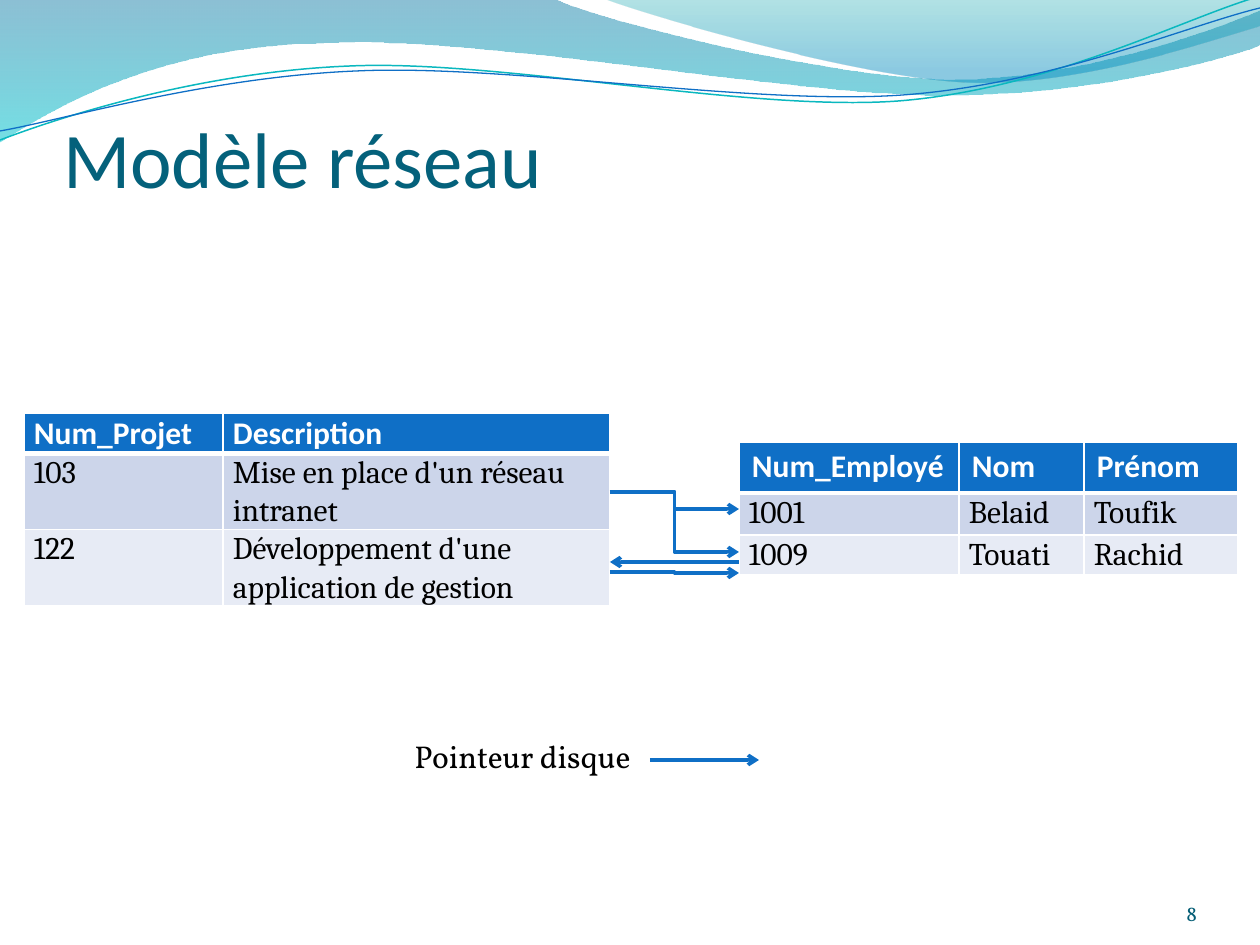
from lxml import etree
from pptx import Presentation
from pptx import util as u
from pptx.dml.color import RGBColor
from pptx.enum import shapes, text
from pptx.oxml.ns import qn

BLUE = RGBColor(0x0F, 0x6F, 0xC6)
AQUA = RGBColor(0x0A, 0xB8, 0xBF)
DEEP = RGBColor(0x00, 0x74, 0xA1)
CYAN = RGBColor(0x00, 0xC6, 0xCF)
TEAL = RGBColor(0x00, 0xA1, 0xA9)
AZURE = RGBColor(0x00, 0x8B, 0xBF)
TITLE = RGBColor(0x04, 0x61, 0x7B)
NUMBER = RGBColor(0x04, 0x5D, 0x75)
DARK = RGBColor(0xCC, 0xD5, 0xEA)
LIGHT = RGBColor(0xE7, 0xEB, 0xF5)
WHITE = RGBColor(0xFF, 0xFF, 0xFF)
BLACK = RGBColor(0x00, 0x00, 0x00)
SCALE = 914400 / 126


def px(n):
    return round(n * SCALE)


def sub(node, tag, **attrs):
    return etree.SubElement(node, qn(tag), {k: str(v) for k, v in attrs.items()})


def bend(shape, parts):
    lines = iter(list(shape._element.iter(qn("a:lnTo"))))
    for part in parts:
        group = [next(lines) for _ in range(len(part) // 2)]
        if len(group) == 3:
            root = group[0].getparent()
            curve = sub(root, "a:cubicBezTo")
            group[0].addprevious(curve)
            for line in group:
                curve.append(line[0])
                root.remove(line)


class Deck:
    head = "Calibri"
    body = "Cambria"
    note = "Vollkorn"

    def __init__(self):
        self.prs = Presentation()
        self.prs.slide_width = px(1260)
        self.prs.slide_height = px(945)
        self.slide = self.prs.slides.add_slide(self.prs.slide_layouts[5])
        self.shapes = self.slide.shapes

    def style(self, frame, font, size, color, bold=False):
        for par in frame.paragraphs:
            for run in par.runs:
                run.font.name = font
                run.font.size = u.Pt(size)
                run.font.bold = bold
                run.font.color.rgb = color

    def inset(self, item, side, top, bottom):
        item.margin_left = item.margin_right = px(side)
        item.margin_top = px(top)
        item.margin_bottom = px(bottom)

    def title(self, words, x, y, w, h):
        box = self.shapes.title
        box.left, box.top, box.width, box.height = map(px, (x, y, w, h))
        frame = box.text_frame
        frame.text = words
        frame.auto_size = text.MSO_AUTO_SIZE.NONE
        frame.vertical_anchor = text.MSO_ANCHOR.BOTTOM
        frame.paragraphs[0].alignment = text.PP_ALIGN.LEFT
        self.inset(frame, 0, 6, 0)
        self.style(frame, self.head, 45, TITLE)

    def label(self, words, x, y, w, h, size, color):
        frame = self.shapes.add_textbox(*map(px, (x, y, w, h))).text_frame
        frame.text = words
        frame.word_wrap = True
        self.style(frame, self.note, size, color)
        return frame

    def number(self, words, x, y, w, h):
        frame = self.label(words, x, y, w, h, 12, NUMBER)
        frame.vertical_anchor = text.MSO_ANCHOR.BOTTOM
        frame.paragraphs[0].alignment = text.PP_ALIGN.RIGHT
        self.inset(frame, 0, 0, 0)

    def form(self, start, parts, close):
        spots = [p for part in parts for p in zip(part[::2], part[1::2])]
        pen = self.shapes.build_freeform(*start, scale=SCALE)
        pen.add_line_segments(spots, close=close)
        shape = pen.convert_to_shape()
        bend(shape, parts)
        shape.shadow.inherit = False
        return shape

    def wave(self, start, parts, stops):
        shape = self.form(start, parts, True)
        shape.line.fill.background()
        shape.fill.gradient()
        shape.fill.gradient_angle = 270
        for stop, (place, color, _) in zip(shape.fill.gradient_stops, stops):
            stop.position = place
            stop.color.rgb = color
        tones = shape._element.spPr.iter(qn("a:srgbClr"))
        for tone, (_, _, alpha) in zip(tones, stops):
            sub(tone, "a:alpha", val=alpha * 1000)

    def curve(self, start, parts, color, width):
        shape = self.form(start, parts, False)
        shape.fill.background()
        shape.line.color.rgb = color
        shape.line.width = u.Pt(width)

    def edge(self, cell, bottom):
        props = cell._tc.get_or_add_tcPr()
        sides = ("a:lnL", 1), ("a:lnR", 1), ("a:lnT", 1), ("a:lnB", bottom)
        for i, (tag, width) in enumerate(sides):
            line = sub(props, tag, w=u.Pt(width))
            sub(sub(line, "a:solidFill"), "a:srgbClr", val=WHITE)
            props.insert(i, line)

    def table(self, x, y, cols, rows, data, roomy=False):
        area = map(px, (x, y, sum(cols), sum(rows)))
        grid = self.shapes.add_table(len(rows), len(cols), *area).table
        for col, w in zip(grid.columns, cols):
            col.width = px(w)
        for row, h in zip(grid.rows, rows):
            row.height = px(h)
        for r, line in enumerate(data):
            for c, words in enumerate(line):
                cell = grid.cell(r, c)
                frame = cell.text_frame
                frame.text = words
                cell.fill.solid()
                cell.fill.fore_color.rgb = (BLUE, DARK, LIGHT)[r]
                if r == 0:
                    self.style(frame, self.head, 18, WHITE, True)
                else:
                    self.style(frame, self.body, 18, BLACK)
                if r == 0 and roomy:
                    self.inset(cell, 13, 6, 6)
                else:
                    self.inset(cell, 10, 0, 0)
                    frame.paragraphs[0].line_spacing = 1.05
                self.edge(cell, 1 if r else 3)

    def arrow(self, x1, y1, x2, y2, bent=False):
        kind = shapes.MSO_CONNECTOR
        link = self.shapes.add_connector(
            kind.ELBOW if bent else kind.STRAIGHT, *map(px, (x1, y1, x2, y2)))
        link.line.color.rgb = BLUE
        link.line.width = u.Pt(2)
        sub(link.line._get_or_add_ln(), "a:tailEnd", type="arrow")
        sub(link._element.spPr, "a:effectLst")


def main():
    deck = Deck()
    deck.wave((0, 0), [
        (554, -1), (600, 21, 837, 79, 955, 79), (1075, 79, 1207, 33, 1260, 11),
        (1261, 45), (1239, 55, 1096, 96, 940, 95), (784, 95, 481, 35, 324, 43),
        (163, 45, 58, 105, -1, 142)], [(0, DEEP, 45), (1, CYAN, 55)])
    deck.wave((604, -1), [
        (641, 14, 859, 78, 969, 82), (1079, 86, 1211, 40, 1260, 26),
        (1260, 0)], [(0, TEAL, 30), (0.8, AZURE, 45)])
    deck.curve((0, 140), [
        (60, 117, 199, 72, 349, 66), (498, 59, 747, 112, 898, 101),
        (1050, 89, 1182, 19, 1257, -3)], AQUA, 0.85)
    deck.curve((0, 131), [
        (59, 121, 207, 77, 357, 71), (508, 64, 752, 106, 903, 95),
        (1053, 84, 1186, 26, 1260, 8)], BLUE, 0.75)
    deck.title("Modèle réseau", 63, 97, 1134, 107)
    deck.table(24, 413, (199, 387), (38, 76, 76), [
        ("Num_Projet", "Description"),
        ("103", "Mise en place d'un réseau intranet"),
        ("122", "Développement d'une application de gestion")])
    deck.number("8", 1092, 876, 105, 50)
    deck.table(739, 442, (220, 125, 154), (51, 42, 40), [
        ("Num_Employé", "Nom", "Prénom"),
        ("1001", "Belaid", "Toufik"),
        ("1009", "Touati", "Rachid")], roomy=True)
    for start, end in (492, 509), (492, 552), (572, 573):
        deck.arrow(610, start, 739, end, bent=True)
    deck.label("Pointeur disque", 402, 731, 417, 50, 18, BLACK)
    deck.arrow(650, 760, 759, 760)
    deck.arrow(739, 562, 610, 562)
    deck.prs.save("out.pptx")


if __name__ == "__main__":
    main()
